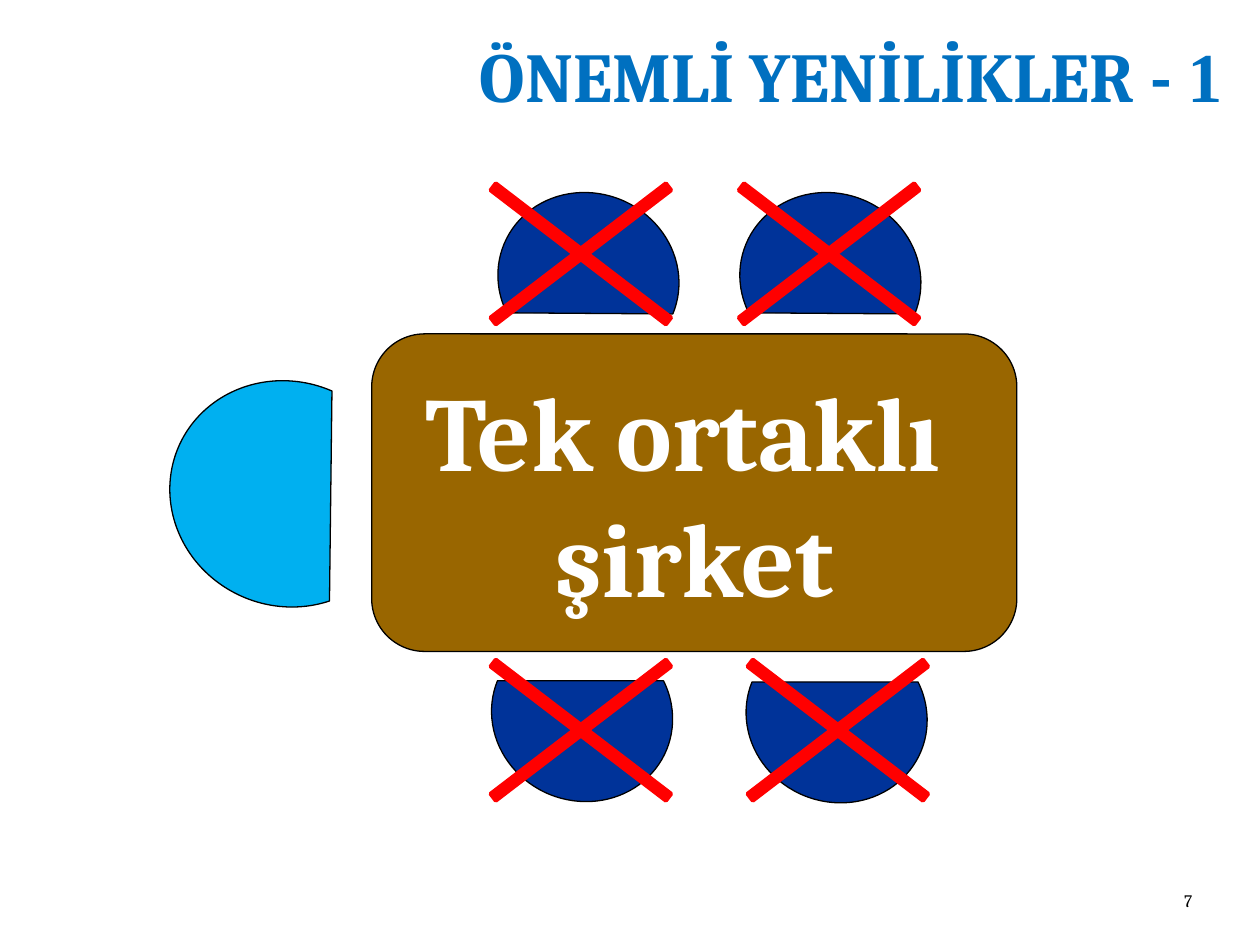
from pptx import Presentation
from pptx.dml.color import RGBColor
from pptx.enum.shapes import MSO_SHAPE as Preset
from pptx.enum.text import MSO_ANCHOR as Anchor, PP_ALIGN as Align
from pptx.util import Inches, Pt

BLACK, WHITE, RED = "000000", "FFFFFF", "FF0000"
NAVY, SKY, BROWN, TITLE_BLUE = "003399", "00B0F0", "996600", "0070C0"


def color(hex_string):
    return RGBColor.from_string(hex_string)


def add_preset(slide, preset, box, fill, line=BLACK, line_width=0.75, rotation=0):
    shape = slide.shapes.add_shape(preset, *map(Inches, box))
    shape.shadow.inherit = False
    shape.fill.solid()
    shape.fill.fore_color.rgb = color(fill)
    shape.line.color.rgb = color(line)
    shape.line.width = Pt(line_width)
    shape.rotation = rotation
    return shape


def add_run(paragraph, text, size, hex_color, bold=False, font="Cambria"):
    run = paragraph.add_run()
    run.text = text
    run.font.name = font
    run.font.size = Pt(size)
    run.font.bold = bold
    run.font.color.rgb = color(hex_color)


def add_right_aligned_box(slide, box, anchor):
    """Add a wrapping text box and return its first paragraph."""
    frame = slide.shapes.add_textbox(*map(Inches, box)).text_frame
    frame.word_wrap = True
    frame.vertical_anchor = anchor
    paragraph = frame.paragraphs[0]
    paragraph.alignment = Align.RIGHT
    return paragraph


def add_chair(slide, left, top, rotation):
    add_preset(slide, Preset.CHORD, (left, top, 1.36, 1.45), NAVY, rotation=rotation)


def add_cross(slide, left, top):
    cross = add_preset(slide, Preset.MATH_MULTIPLY, (left, top, 2.68, 2.05),
                       RED, line=RED, line_width=2.25)
    cross.adjustments[0] = 0.034


def add_table_top(slide):
    table_top = add_preset(slide, Preset.ROUNDED_RECTANGLE,
                           (2.95, 2.65, 5.12, 2.52), BROWN)
    frame = table_top.text_frame
    frame.word_wrap = False
    frame.vertical_anchor = Anchor.MIDDLE
    for index, text in enumerate(("Tek ortaklı ", "şirket")):
        paragraph = frame.add_paragraph() if index else frame.paragraphs[0]
        paragraph.alignment = Align.CENTER
        add_run(paragraph, text, 60, WHITE, bold=True)


def main():
    presentation = Presentation()
    presentation.slide_width = Inches(10)
    presentation.slide_height = Inches(7.5)
    slide = presentation.slides.add_slide(presentation.slide_layouts[6])

    for left, top, rotation in ((3.99, 1.49, 112.5), (5.91, 1.49, 112.5),
                                (3.94, 4.95, 292.1), (5.96, 4.96, 292.1)):
        add_chair(slide, left, top, rotation)
    add_table_top(slide)
    add_preset(slide, Preset.CHORD, (1.34, 3.03, 1.88, 1.78), SKY, rotation=23.5)
    for left, top in ((3.27, 0.99), (5.24, 0.99), (3.27, 4.77), (5.31, 4.77)):
        add_cross(slide, left, top)

    title = add_right_aligned_box(slide, (1.06, 0.21, 8.74, 0.77), Anchor.TOP)
    add_run(title, "ÖNEMLİ YENİLİKLER - ", 40, TITLE_BLUE, bold=True)
    add_run(title, "1", 40, TITLE_BLUE, bold=True, font="Times New Roman")

    page_number = add_right_aligned_box(slide, (7.48, 6.9, 2.08, 0.38), Anchor.BOTTOM)
    add_run(page_number, "7", 10, BLACK)

    presentation.save("out.pptx")


if __name__ == "__main__":
    main()
